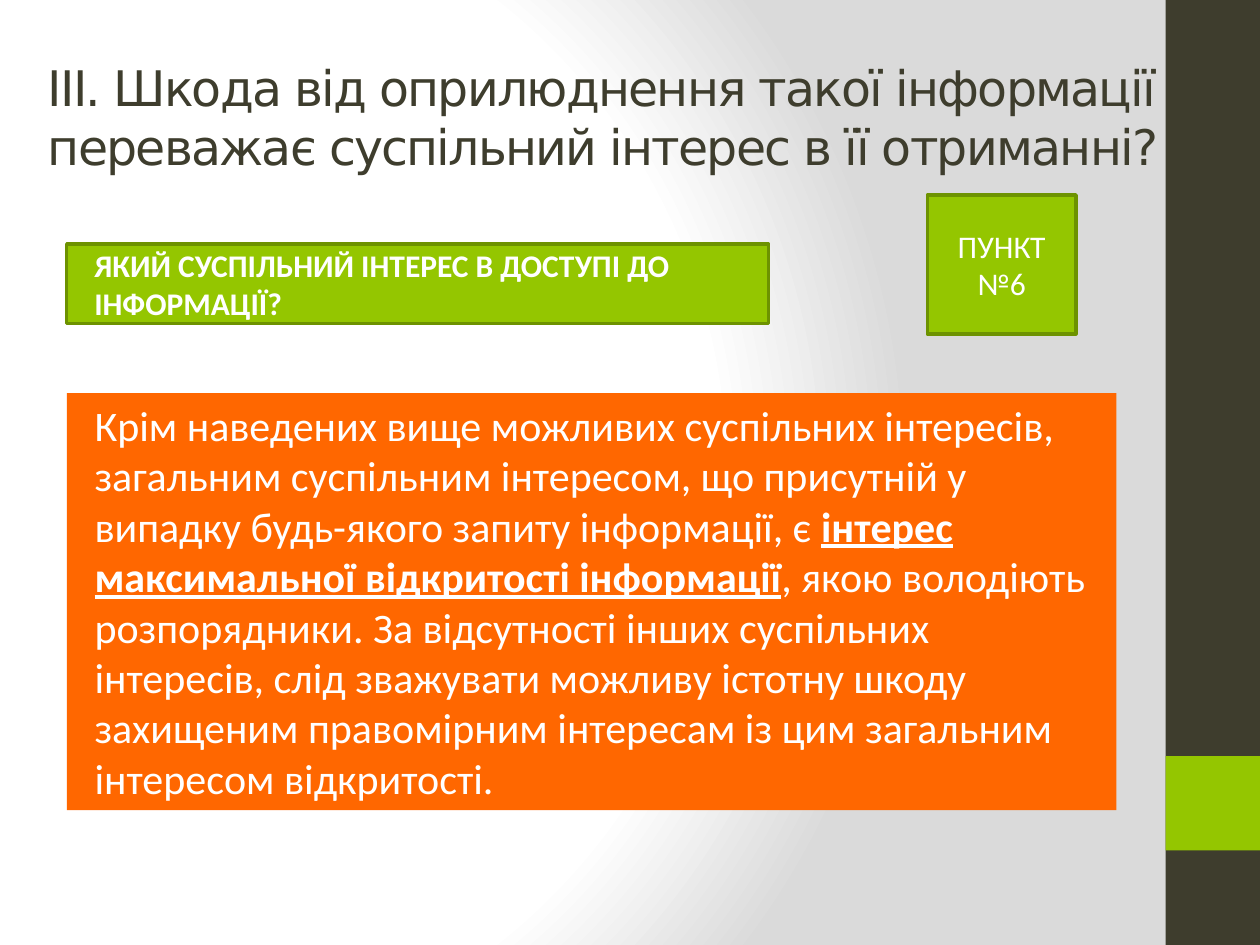
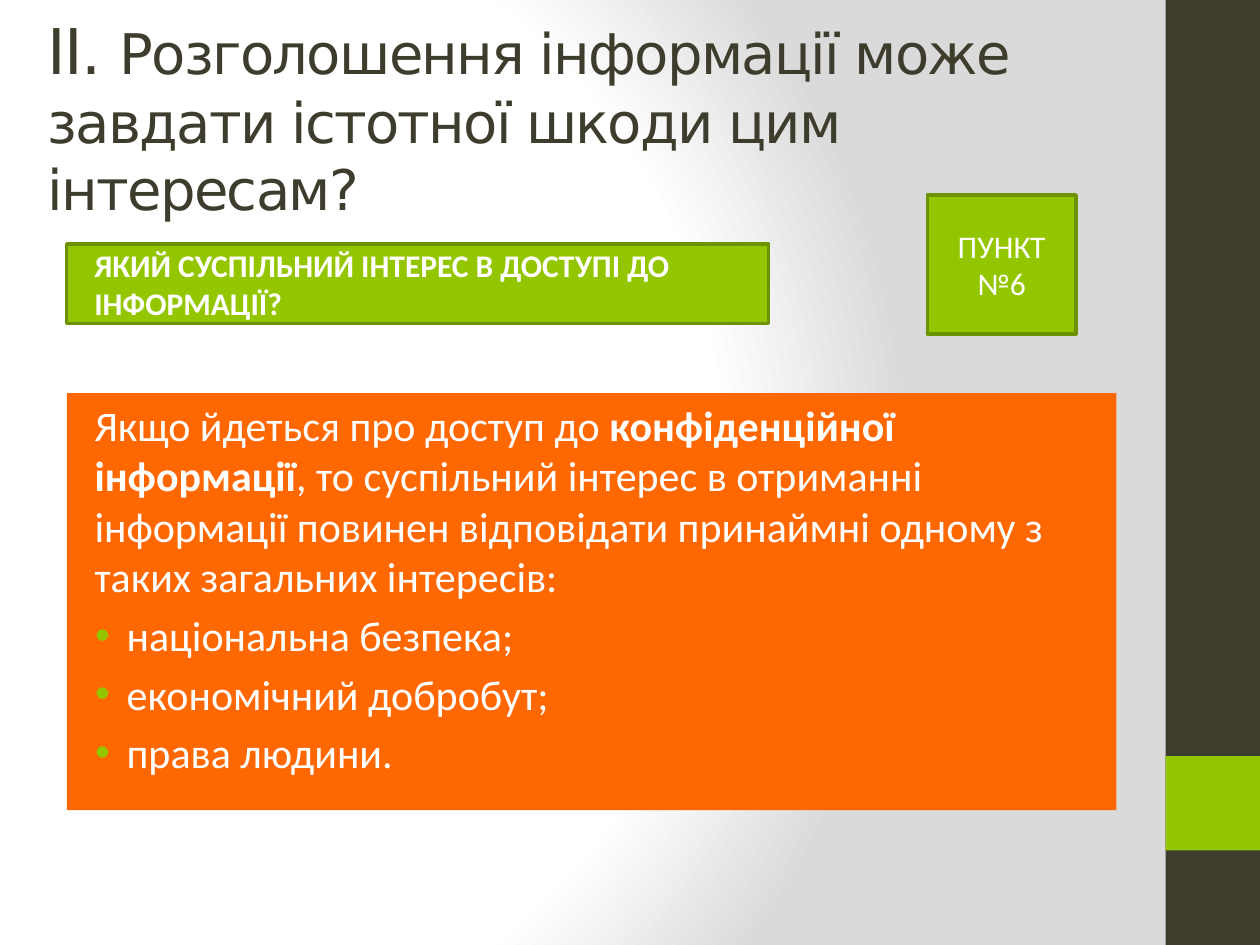
"""Build two slides on weighing the public interest in access to information."""
from pptx import Presentation
from pptx.dml.color import RGBColor
from pptx.enum.shapes import MSO_SHAPE
from pptx.enum.text import MSO_ANCHOR, MSO_AUTO_SIZE, PP_ALIGN
from pptx.oxml import parse_xml
from pptx.oxml.ns import nsdecls, qn
from pptx.util import Pt

RECTANGLE = MSO_SHAPE.RECTANGLE
TOP, MIDDLE = MSO_ANCHOR.TOP, MSO_ANCHOR.MIDDLE
LEFT, CENTER = PP_ALIGN.LEFT, PP_ALIGN.CENTER
NO_FIT = MSO_AUTO_SIZE.NONE

DARK, GREEN, GREEN_EDGE, ORANGE, WHITE = "3E3D2D", "94C600", "6D9200", "FF6700", "FFFFFF"
BACKGROUND_STOPS = [(0, WHITE), (75, WHITE), (100, "DADADA")]
BODY_FONT, TITLE_FONT = "Calibri", "DejaVu Sans"

PAGE_WIDTH, PAGE_HEIGHT = 720, 540
BAND_WIDTH = 54
BAND_LEFT = PAGE_WIDTH - BAND_WIDTH
BANDS = [
    ((BAND_LEFT, 0, BAND_WIDTH, PAGE_HEIGHT), DARK),
    ((BAND_LEFT, 432, BAND_WIDTH, BAND_WIDTH), GREEN),
]
TITLE_LEFT, TITLE_TOP, TITLE_HEIGHT = 20.16, 21.6, 90
CONTENT_LEFT = 38.16
BODY_PLACE = (CONTENT_LEFT, 224.64, 599.76, 238.32)
QUESTION_PLACE = (CONTENT_LEFT, 139.5, 401.04, 45.36)
BADGE_PLACE = (529.92, 111.4, 84.96, 79.4)
PLAIN_INDENT, BULLET_INDENT, BULLET_HANG = 8.64, 27, 18

QUESTION = "ЯКИЙ СУСПІЛЬНИЙ ІНТЕРЕС В ДОСТУПІ ДО ІНФОРМАЦІЇ?"
BADGE = "ПУНКТ №6"
SLIDES = [
    {
        "title": [("ІІІ. Шкода від оприлюднення такої інформації переважає "
                   "суспільний інтерес в її отриманні?", {"size": 28})],
        "title_width": 652.32,
        "body": [
            ("Крім наведених вище можливих суспільних інтересів, загальним суспільним "
             "інтересом, що присутній у випадку будь-якого запиту інформації, є ", {}),
            ("інтерес максимальної відкритості інформації", {"bold": True, "underline": True}),
            (", якою володіють розпорядники. За відсутності інших суспільних інтересів, слід "
             "зважувати можливу істотну шкоду захищеним правомірним інтересам із цим "
             "загальним інтересом відкритості.", {}),
        ],
        "bullets": [],
    },
    {
        "title": [("ІІ. ", {"size": 36}),
                  ("Розголошення інформації може завдати істотної шкоди цим інтересам?",
                   {"size": 32})],
        "title_width": 640.8,
        "body": [
            ("Якщо йдеться про доступ до ", {}),
            ("конфіденційної інформації", {"bold": True}),
            (", то суспільний інтерес в отриманні інформації повинен відповідати принаймні "
             "одному з таких загальних інтересів:", {}),
        ],
        "bullets": ["національна безпека;", "економічний добробут;", "права людини."],
    },
]


def color(value):
    return RGBColor.from_string(value)


def place(shape, left, top, width, height):
    shape.left, shape.top, shape.width, shape.height = map(Pt, (left, top, width, height))


def paint(shape, fill, edge=None):
    shape.fill.solid()
    shape.fill.fore_color.rgb = color(fill)
    if edge:
        shape.line.color.rgb = color(edge)
        shape.line.width = Pt(2)
    else:
        shape.line.fill.background()


def add_box(page, position, fill, edge=None):
    box = page.shapes.add_shape(RECTANGLE, *map(Pt, position))
    box.shadow.inherit = False
    paint(box, fill, edge)
    return box


def prepare_frame(shape, anchor):
    frame = shape.text_frame
    frame.word_wrap = True
    frame.auto_size = NO_FIT
    frame.vertical_anchor = anchor
    return frame


def write(para, text, size=24, font=BODY_FONT, fill=WHITE, bold=False, underline=False,
          spacing=0):
    span = para.add_run()
    span.text = text
    span.font.size, span.font.name = Pt(size), font
    span.font.bold, span.font.underline = bold, underline
    span.font.color.rgb = color(fill)
    if spacing:
        span.font._element.set("spc", str(spacing * 100))


def format_para(para, align=LEFT, before=0, margin=0, hang=0, bullet=False):
    para.alignment = align
    para.space_before = Pt(before)
    properties = para._p.get_or_add_pPr()
    properties.set("marL", str(Pt(margin)))
    properties.set("indent", str(-Pt(hang)))
    marks = ([f'<a:buClr {nsdecls("a")}><a:srgbClr val="{GREEN}"/></a:buClr>',
              f'<a:buFont {nsdecls("a")} typeface="Arial"/>',
              f'<a:buChar {nsdecls("a")} char="•"/>']
             if bullet else [f'<a:buNone {nsdecls("a")}/>'])
    for mark in marks:
        properties.append(parse_xml(mark))


def set_background(master):
    master.background.fill.solid()
    holder = next(master.element.iter(qn("p:bgPr")))
    stops = "".join(f'<a:gs pos="{position * 1000}"><a:srgbClr val="{value}"/></a:gs>'
                    for position, value in BACKGROUND_STOPS)
    holder.replace(holder[0], parse_xml(
        f'<a:gradFill {nsdecls("a")} rotWithShape="1"><a:gsLst>{stops}</a:gsLst>'
        '<a:path path="circle"><a:fillToRect l="20000" t="50000" r="100000" b="50000"/>'
        '</a:path></a:gradFill>'))


def move_bands_to_master(page, master):
    tree = master.element.cSld.spTree
    for index, (position, fill) in enumerate(BANDS):
        tree.insert(2 + index, add_box(page, position, fill).element)


def fill_title(title, spans, width):
    place(title, TITLE_LEFT, TITLE_TOP, width, TITLE_HEIGHT)
    para = prepare_frame(title, MIDDLE).paragraphs[0]
    format_para(para)
    for text, style in spans:
        write(para, text, font=TITLE_FONT, fill=DARK, spacing=-1, **style)


def fill_body(body, spans, bullets):
    place(body, *BODY_PLACE)
    paint(body, ORANGE)
    frame = prepare_frame(body, TOP)
    para = frame.paragraphs[0]
    format_para(para, before=4.8, margin=PLAIN_INDENT)
    for text, style in spans:
        write(para, text, **style)
    for bullet in bullets:
        para = frame.add_paragraph()
        format_para(para, before=4.8, margin=BULLET_INDENT, hang=BULLET_HANG, bullet=True)
        write(para, bullet)


def add_label(page, position, text, bold=False, **layout):
    box = add_box(page, position, GREEN, GREEN_EDGE)
    para = prepare_frame(box, MIDDLE).paragraphs[0]
    format_para(para, **layout)
    write(para, text, size=18, bold=bold)


def main():
    deck = Presentation()
    deck.slide_width, deck.slide_height = Pt(PAGE_WIDTH), Pt(PAGE_HEIGHT)
    set_background(deck.slide_master)
    for content in SLIDES:
        page = deck.slides.add_slide(deck.slide_layouts[1])
        fill_title(page.shapes.title, content["title"], content["title_width"])
        fill_body(page.placeholders[1], content["body"], content["bullets"])
        add_label(page, QUESTION_PLACE, QUESTION, bold=True, margin=PLAIN_INDENT)
        add_label(page, BADGE_PLACE, BADGE, align=CENTER)
    move_bands_to_master(deck.slides[0], deck.slide_master)
    deck.save("out.pptx")


if __name__ == "__main__":
    main()
